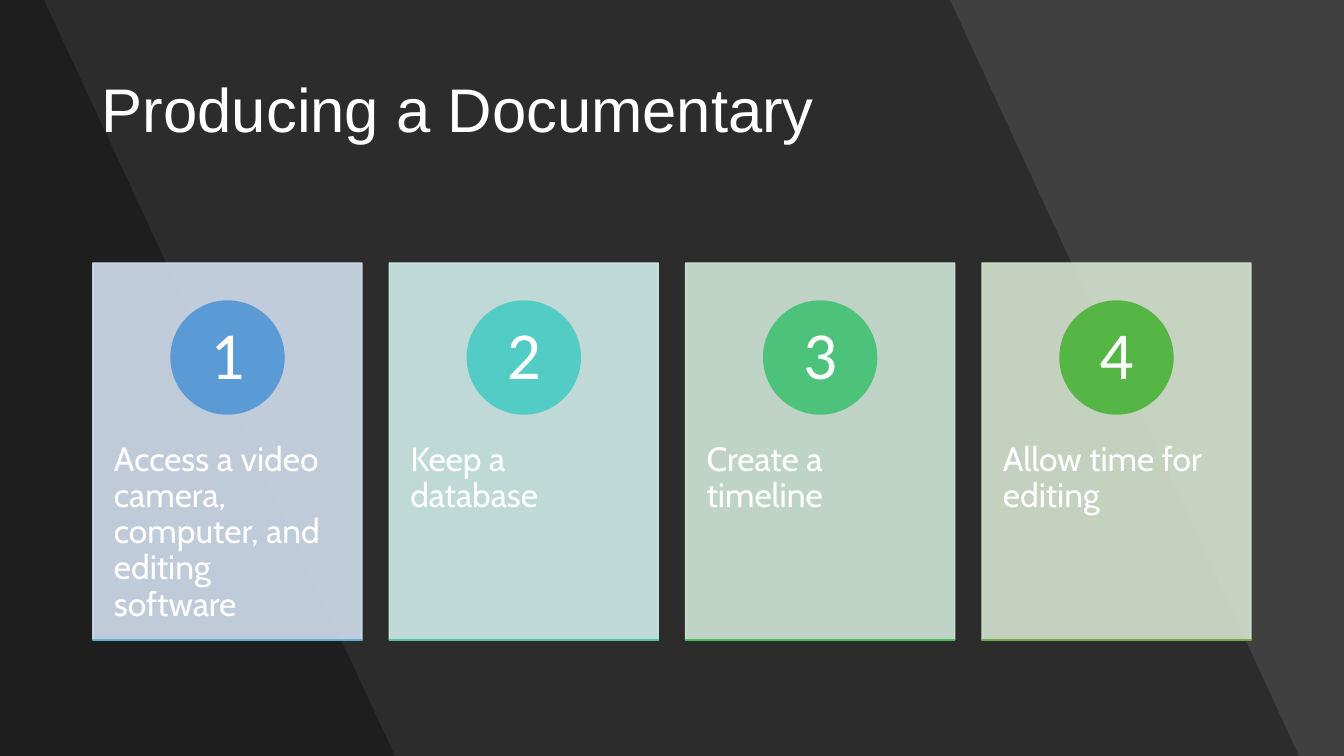
from lxml import etree
from pptx import Presentation
from pptx.dml.color import RGBColor
from pptx.enum.shapes import MSO_SHAPE
from pptx.enum.text import MSO_ANCHOR, PP_ALIGN
from pptx.oxml.ns import qn
from pptx.util import Emu, Pt

RECTANGLE, OVAL = MSO_SHAPE.RECTANGLE, MSO_SHAPE.OVAL
TOP, MIDDLE = MSO_ANCHOR.TOP, MSO_ANCHOR.MIDDLE
LEFT, CENTER = PP_ALIGN.LEFT, PP_ALIGN.CENTER

SLIDE_WIDTH, SLIDE_HEIGHT = 1344, 756
PX_PER_INCH = 100.8
WHITE = "FFFFFF"

# Step text, card colour, circle colour, bottom rule colour
STEPS = [
    ("Access a video camera, computer, and editing software",
     "D2DEEF", "5B9BD5", "57B7D1"),
    ("Keep a database", "D0ECEA", "53CCC5", "4FC7A0"),
    ("Create a timeline", "D0E7D8", "4CC27B", "48BD58"),
    ("Allow time for editing", "D5E3CF", "55B646", "70AD47"),
]


def px(length):
    return Emu(round(length * 914400 / PX_PER_INCH))


def paint(color_format, color, opacity=100):
    color_format.fore_color.rgb = RGBColor.from_string(color)
    if opacity < 100:
        for rgb in color_format._xPr.iter(qn("a:srgbClr")):
            etree.SubElement(rgb, qn("a:alpha"), val=str(opacity * 1000))


def add_text(slide, box, text, *, font, size, color=WHITE, align=LEFT,
             anchor=TOP, inset=(10, 5)):
    text_box = slide.shapes.add_textbox(*map(px, box))
    frame = text_box.text_frame
    frame.word_wrap = True
    frame.vertical_anchor = anchor
    frame.margin_left = frame.margin_right = px(inset[0])
    frame.margin_top = frame.margin_bottom = px(inset[1])
    paragraph = frame.paragraphs[0]
    paragraph.alignment = align
    paragraph.line_spacing = 0.9
    run = paragraph.add_run()
    run.text = text
    run.font.name = font
    run.font.size = Pt(size)
    run.font.color.rgb = RGBColor.from_string(color)


def add_figure(slide, kind, box, color, opacity=100):
    figure = slide.shapes.add_shape(kind, *map(px, box))
    figure.shadow.inherit = False
    figure.line.width = Pt(1)
    for part in (figure.fill, figure.line.fill):
        part.solid()
        paint(part, color, opacity)


def add_background(slide, box):
    left, top, width, height = box
    backdrop = slide.background.fill
    backdrop.solid()
    paint(backdrop, "404040")
    # Slanted shades: right edge at the top and at the bottom
    for top_edge, bottom_edge in ((950, 1299), (44, 395)):
        builder = slide.shapes.build_freeform(px(left), px(top))
        builder.add_line_segments([
            (px(left + top_edge), px(top)),
            (px(left + bottom_edge), px(top + height)),
            (px(left), px(top + height)),
        ], close=True)
        shade = builder.convert_to_shape()
        shade.shadow.inherit = False
        shade.line.fill.background()
        shade.fill.solid()
        paint(shade.fill, "000000", 30)


def add_card(slide, box, number, step):
    left, top, width, height = box
    text, card_color, circle_color, rule_color = step
    circle_size, number_size = 113, 80
    circle_top = top + 38
    number_top = circle_top + (circle_size - number_size) / 2

    add_figure(slide, RECTANGLE, box, card_color, 90)
    add_text(slide, (left, top + 143, width, 227), text,
             font="Cabin", size=24, inset=(21, 36))
    # Numbered circle, centred across the card
    add_figure(slide, OVAL, (left + (width - circle_size) / 2, circle_top,
                             circle_size, circle_size), circle_color)
    add_text(slide, (left + (width - number_size) / 2, number_top,
                     number_size, number_size), str(number),
             font="Calibri", size=48, align=CENTER, anchor=MIDDLE,
             inset=(9, 1))
    # Bottom rule
    add_figure(slide, RECTANGLE, (left, top + height, width, 0), rule_color)


def add_steps(slide, box):
    left, top, width, height = box
    card_width = 269
    pitch = (width - card_width) / (len(STEPS) - 1)
    for index, step in enumerate(STEPS):
        card_box = (left + index * pitch, top, card_width, height)
        add_card(slide, card_box, index + 1, step)


def main():
    deck = Presentation()
    deck.slide_width, deck.slide_height = px(SLIDE_WIDTH), px(SLIDE_HEIGHT)
    slide = deck.slides.add_slide(deck.slide_layouts[6])
    add_background(slide, (0, 0, SLIDE_WIDTH, SLIDE_HEIGHT))
    add_text(slide, (92, 40, 1160, 146), "Producing a Documentary",
             font="Arial", size=44, anchor=MIDDLE)
    add_steps(slide, (93, 263, 1158, 377))
    deck.save("out.pptx")


if __name__ == "__main__":
    main()
